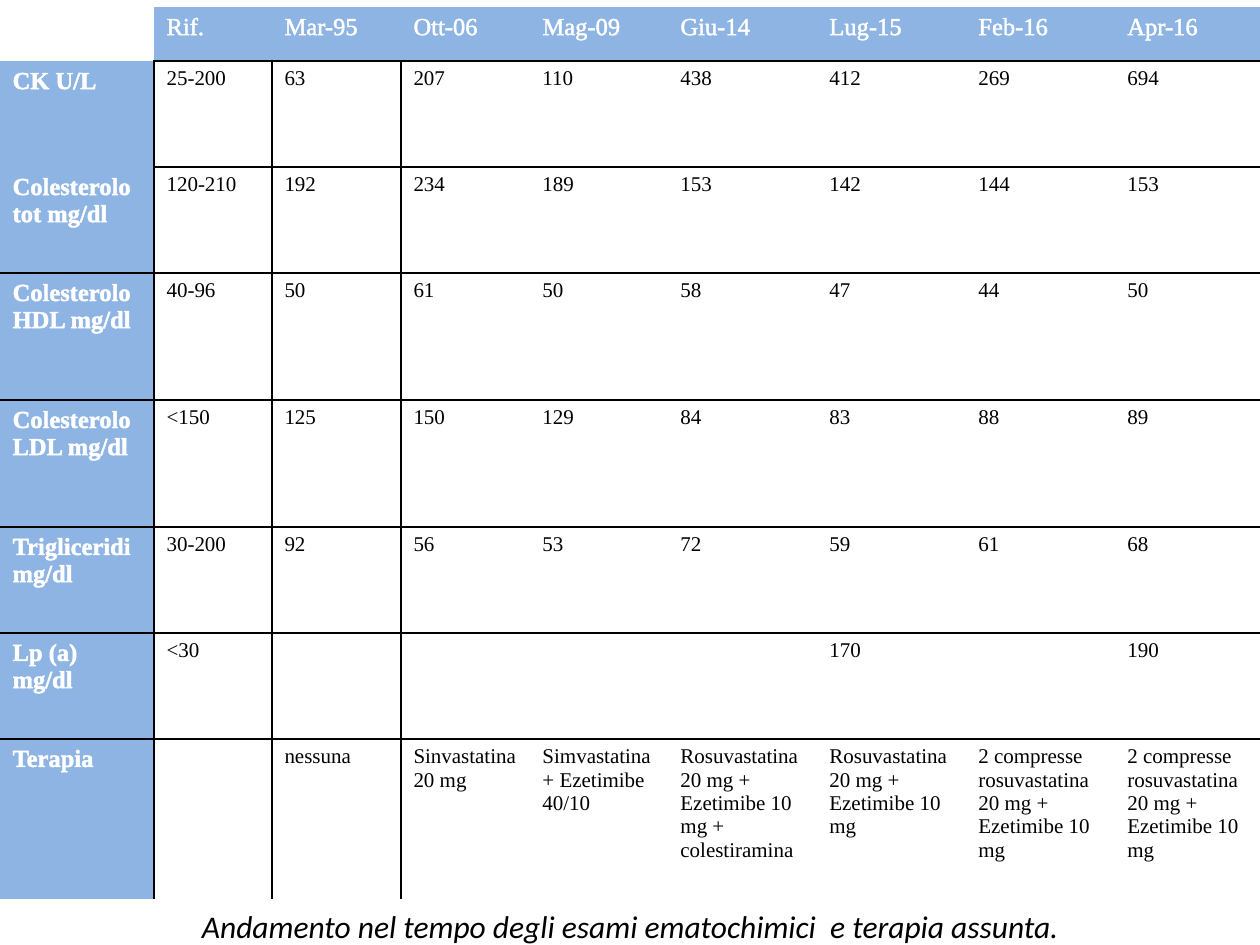
from lxml import etree
from pptx import Presentation
from pptx import util as u
from pptx.dml.color import RGBColor
from pptx.enum import text
from pptx.oxml.ns import qn

HEADER = ["", "Rif.", "Mar-95", "Ott-06", "Mag-09", "Giu-14", "Lug-15", "Feb-16", "Apr-16"]
ROWS = [
    ["CK U/L", "25-200", "63", "207", "110", "438", "412", "269", "694"],
    ["Colesterolo tot mg/dl", "120-210", "192", "234", "189", "153", "142", "144", "153"],
    ["Colesterolo HDL mg/dl", "40-96", "50", "61", "50", "58", "47", "44", "50"],
    ["Colesterolo LDL mg/dl", "<150", "125", "150", "129", "84", "83", "88", "89"],
    ["Trigliceridi  mg/dl", "30-200", "92", "56", "53", "72", "59", "61", "68"],
    ["Lp (a) mg/dl", "<30", "", "", "", "", "170", "", "190"],
    ["Terapia", "", "nessuna", "Sinvastatina 20 mg", "Simvastatina + Ezetimibe 40/10",
     "Rosuvastatina 20 mg + Ezetimibe 10 mg + colestiramina",
     "Rosuvastatina 20 mg + Ezetimibe 10 mg",
     "2 compresse rosuvastatina 20 mg + Ezetimibe 10 mg",
     "2 compresse rosuvastatina 20 mg + Ezetimibe 10 mg"],
]
CAPTION = "Andamento nel tempo degli esami ematochimici  e terapia assunta."
COL_W = [154, 118, 129, 129, 138, 149, 149, 149, 149]
ROW_H = [54, 106, 106, 127, 127, 106, 106, 160]
COLORS = {"band": "8EB4E3", "white": "FFFFFF", "black": "000000"}
PX = u.Inches(1) / 126


def px(n):
    return u.Emu(round(n * PX))


def add_line(parent, tag, width, color):
    ln = etree.SubElement(parent, qn(tag), w=str(u.Pt(width)))
    if color:
        fill = etree.SubElement(ln, qn("a:solidFill"))
        etree.SubElement(fill, qn("a:srgbClr"), val=COLORS[color])
    else:
        etree.SubElement(ln, qn("a:noFill"))
    return ln


def line_below(row, col):
    if row < 0 or row == len(ROWS):
        return False
    return col > 0 or row > 1


def line_right(row, col):
    return row > 0 and 0 <= col <= 2


def set_borders(cell, row, col):
    tc_pr = cell._tc.get_or_add_tcPr()
    edges = [("L", line_right(row, col - 1)), ("R", line_right(row, col)),
             ("T", line_below(row - 1, col)), ("B", line_below(row, col))]
    for side, drawn in edges:
        add_line(tc_pr, "a:ln" + side, 1, "black" if drawn else None)


def format_run(r, font, size, color, bold=False, italic=False):
    r.font.name = font
    r.font.size = u.Pt(size)
    r.font.bold = bold
    r.font.italic = italic
    r.font.color.rgb = RGBColor.from_string(COLORS[color])


def fill_cell(cell, value, row, col):
    heading = row == 0 or col == 0
    set_borders(cell, row, col)
    if heading:
        cell.fill.solid()
        color = "band" if row or col else "white"
        cell.fill.fore_color.rgb = RGBColor.from_string(COLORS[color])
    else:
        cell.fill.background()
    cell.text_frame.text = value
    for r in cell.text_frame.paragraphs[0].runs:
        format_run(r, "Times New Roman", 14 if heading else 12,
                   "white" if heading else "black", bold=col == 0)
        if heading:
            r_pr = r._r.get_or_add_rPr()
            r_pr.insert(0, add_line(r_pr, "a:ln", 0.75, "white"))


prs = Presentation()
prs.slide_width, prs.slide_height = px(1260), px(945)
s = prs.slides.add_slide(prs.slide_layouts[6])

table = s.shapes.add_table(len(ROW_H), len(COL_W), px(0), px(7),
                           px(sum(COL_W)), px(sum(ROW_H))).table
table.first_row = table.horz_banding = False
for column, width in zip(table.columns, COL_W):
    column.width = px(width)
for table_row, height in zip(table.rows, ROW_H):
    table_row.height = px(height)
for i, values in enumerate([HEADER] + ROWS):
    for j, value in enumerate(values):
        fill_cell(table.cell(i, j), value, i, j)

tf = s.shapes.add_textbox(px(1), px(901), px(1259), px(50)).text_frame
tf.word_wrap = True
tf.text = CAPTION
p = tf.paragraphs[0]
p.alignment = text.PP_ALIGN.CENTER
format_run(p.runs[0], "Calibri", 18, "black", italic=True)

prs.save("out.pptx")
